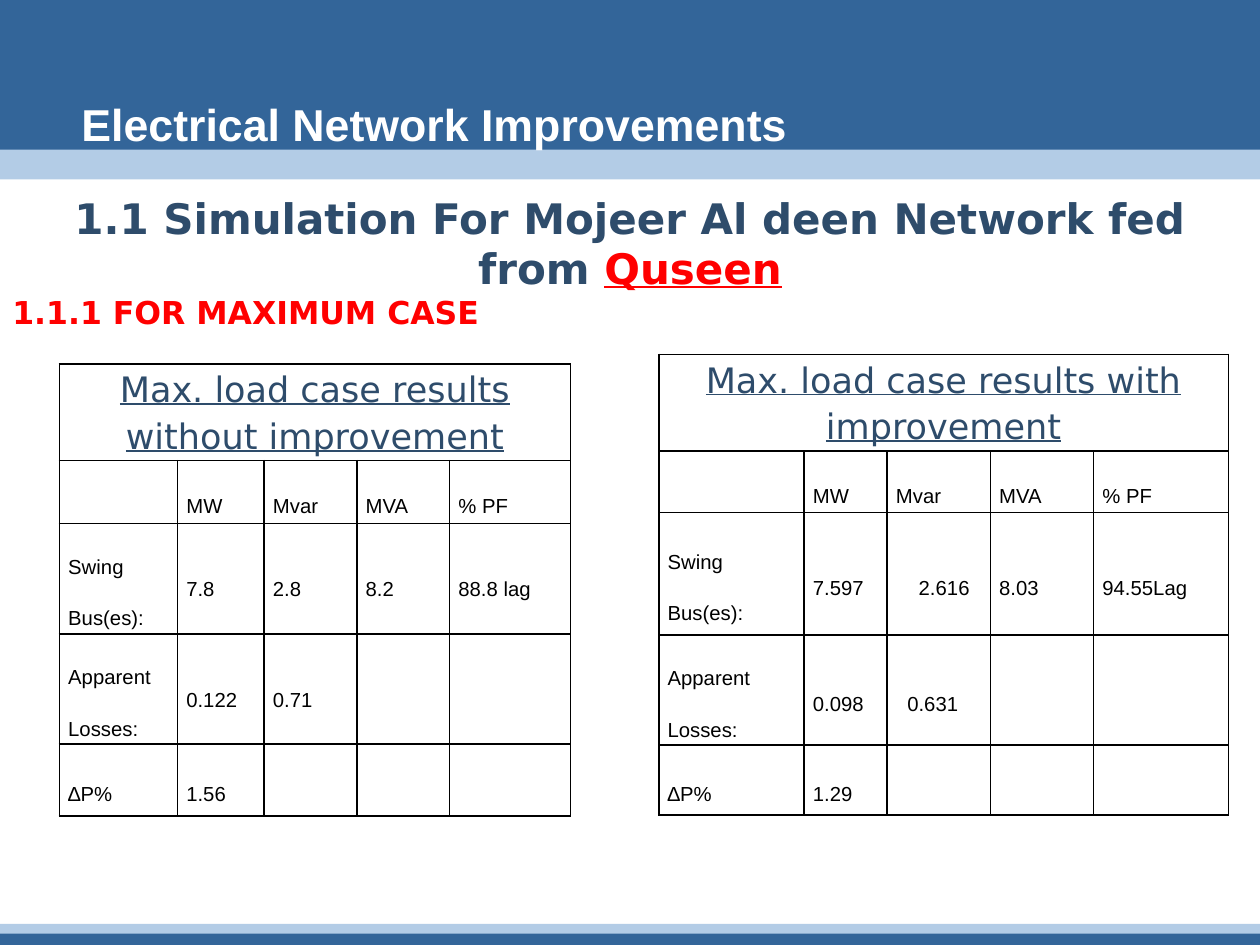
from lxml import etree
from pptx import Presentation
from pptx.dml.color import RGBColor
from pptx.enum.shapes import MSO_SHAPE
from pptx.enum.text import MSO_ANCHOR, MSO_AUTO_SIZE, PP_ALIGN
from pptx.oxml.ns import qn
from pptx.util import Pt

RECT = MSO_SHAPE.RECTANGLE
MID = MSO_ANCHOR.MIDDLE
TOP = MSO_ANCHOR.TOP
LEFT = PP_ALIGN.LEFT
CENTER = PP_ALIGN.CENTER
GROW = MSO_AUTO_SIZE.SHAPE_TO_FIT_TEXT

BLUE, PALE, NAVY = "336599", "B3CCE6", "2E4C6B"
RED, BLACK, WHITE = "FF0000", "000000", "FFFFFF"
SANS, ARIAL = "DejaVu Sans", "Arial"
INSET = 5

HEADS = ["", "MW", "Mvar", "MVA", "% PF"]
WITH = [
    HEADS,
    ["Swing Bus(es):", "7.597", "2.616", "8.03", "94.55Lag"],
    ["Apparent Losses:", "0.098", "0.631", "", ""],
    ["∆P%", "1.29", "", "", ""],
]
WITHOUT = [
    HEADS,
    ["Swing Bus(es):", "7.8", "2.8", "8.2", "88.8 lag"],
    ["Apparent Losses:", "0.122", "0.71", "", ""],
    ["∆P%", "1.56", "", "", ""],
]


def color(code):
    return RGBColor.from_string(code)


def add_bar(slide, top, height, fill):
    bar = slide.shapes.add_shape(RECT, 0, Pt(top), Pt(720), Pt(height))
    bar.shadow.inherit = False
    bar.fill.solid()
    bar.fill.fore_color.rgb = color(fill)
    bar.line.fill.background()


def add_run(para, text, size, face, ink, bold=False, under=False, sub=False):
    run = para.add_run()
    run.text = text
    font = run.font
    font.size, font.name = Pt(size), face
    font.bold, font.underline = bold, under
    font.color.rgb = color(ink)
    if sub:
        run._r.get_or_add_rPr().set("baseline", "-25000")


def add_box(slide, left, top, width, height, wrap=True):
    box = slide.shapes.add_textbox(Pt(left), Pt(top), Pt(width), Pt(height))
    frame = box.text_frame
    frame.word_wrap = wrap
    frame.auto_size = GROW
    return frame


def add_edges(cell):
    props = cell._tc.get_or_add_tcPr()
    for spot, side in enumerate(("a:lnL", "a:lnR", "a:lnT", "a:lnB")):
        line = etree.Element(qn(side), w=str(Pt(1)))
        fill = etree.SubElement(line, qn("a:solidFill"))
        etree.SubElement(fill, qn("a:srgbClr"), val=BLACK)
        props.insert(spot, line)


def set_cell(cell, anchor):
    cell.fill.background()
    cell.vertical_anchor = anchor
    cell.margin_left = cell.margin_right = Pt(INSET)
    cell.margin_top = cell.margin_bottom = 0
    add_edges(cell)


def open_para(cell, align=LEFT, loose=True):
    para = cell.text_frame.paragraphs[0]
    para.alignment = align
    if loose:
        para.line_spacing = 1.15
        para.space_before = Pt(24)
    return para


def add_grid(slide, left, top, cols, rows, title, data, tight=(), shifts=None):
    frame = slide.shapes.add_table(
        len(rows), len(cols), Pt(left), Pt(top), Pt(sum(cols)), Pt(sum(rows)))
    table = frame.table
    table.first_row = table.horz_banding = False
    for col, width in zip(table.columns, cols):
        col.width = Pt(width)
    for row, height in zip(table.rows, rows):
        row.height = Pt(height)

    for c in range(len(cols)):
        set_cell(table.cell(0, c), TOP)
    head = table.cell(0, 0)
    head.merge(table.cell(0, len(cols) - 1))
    add_run(open_para(head, CENTER), title, 20, SANS, NAVY, under=True)

    for r, line in enumerate(data, 1):
        for c, text in enumerate(line):
            cell = table.cell(r, c)
            set_cell(cell, MID)
            if text:
                para = open_para(cell, loose=c == 0 or r not in tight)
                add_run(para, text, 20, ARIAL, BLACK, sub=True)
    for (r, c), shift in (shifts or {}).items():
        table.cell(r, c).margin_left = Pt(INSET + shift)


def main():
    deck = Presentation()
    deck.slide_width, deck.slide_height = Pt(720), Pt(540)
    slide = deck.slides.add_slide(deck.slide_layouts[6])

    add_bar(slide, 0, 94, BLUE)
    add_bar(slide, 531, 9, BLUE)
    add_bar(slide, 85.5, 17, PALE)
    add_bar(slide, 528, 5.5, PALE)

    title = add_box(slide, 39.5, 22.5, 492.5, 42.5, wrap=False)
    add_run(title.paragraphs[0], "Electrical Network Improvements",
            44, ARIAL, WHITE, bold=True, sub=True)

    body = add_box(slide, 0, 106.5, 720, 143)
    first = body.paragraphs[0]
    first.alignment = CENTER
    add_run(first, "1.1 Simulation For Mojeer Al deen Network fed",
            24, SANS, NAVY, bold=True)
    second = body.add_paragraph()
    second.alignment = CENTER
    add_run(second, "from ", 24, SANS, NAVY, bold=True)
    add_run(second, "Quseen", 24, SANS, RED, bold=True, under=True)
    third = body.add_paragraph()
    add_run(third, "1.1.1 FOR MAXIMUM CASE", 18, SANS, RED, bold=True)

    add_grid(slide, 376.5, 202.5, [83, 47.5, 59, 59, 77], [55, 35, 70, 63, 40],
             "Max. load case results with improvement", WITH,
             shifts={(2, 2): 13, (3, 2): 6.5})
    add_grid(slide, 34, 208, [67.5, 49.5, 53, 53, 69], [55, 36, 63, 63, 41],
             "Max. load case results without improvement", WITHOUT,
             tight=(2, 3))

    deck.save("out.pptx")


if __name__ == "__main__":
    main()
